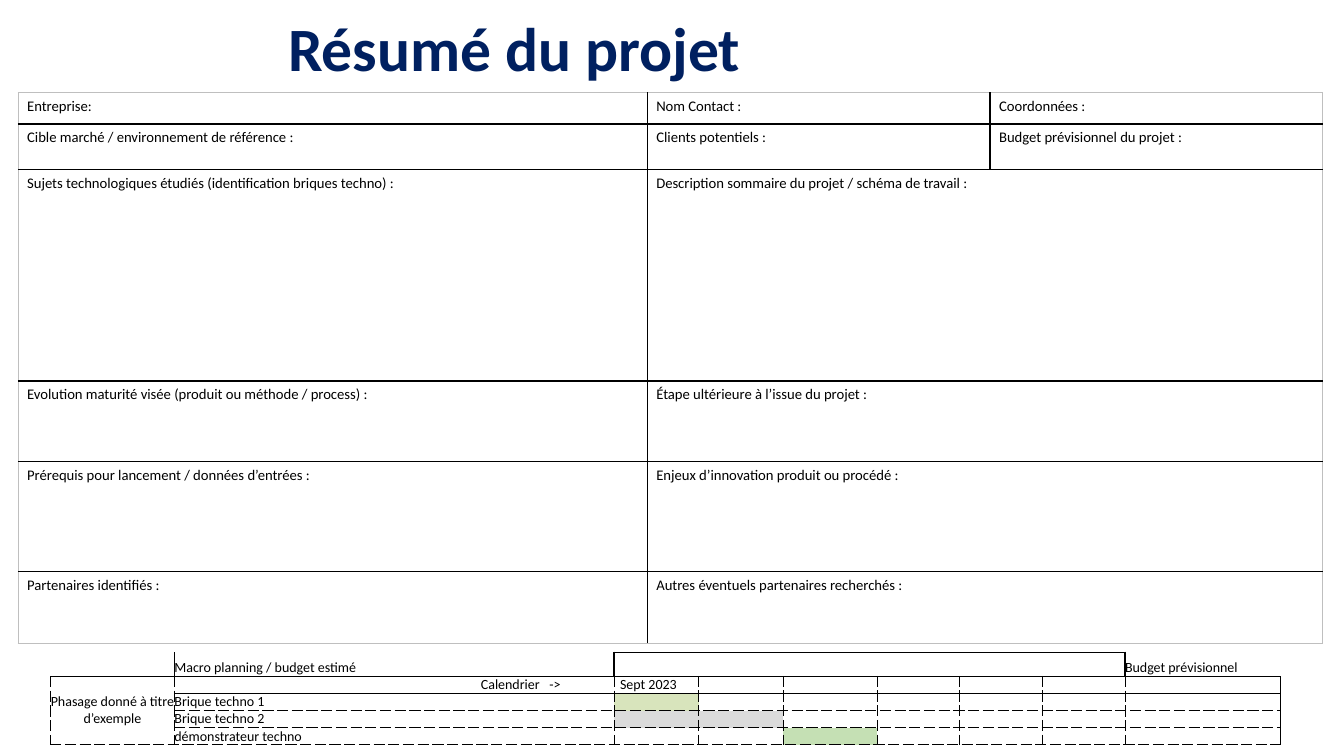
"""Build the project summary slide: title, description grid and macro planning."""
import lxml.etree
import pptx
import pptx.dml.color
import pptx.enum.text
import pptx.oxml.ns
import pptx.util

Inches = pptx.util.Inches
Pt = pptx.util.Pt
qn = pptx.oxml.ns.qn
MIDDLE = pptx.enum.text.MSO_ANCHOR.MIDDLE
BOTTOM = pptx.enum.text.MSO_ANCHOR.BOTTOM


def write(text_frame, text, size, colour="000000", bold=False):
    """Set the text of a frame, and keep the same size when it is empty."""
    text_frame.text = text
    paragraph = text_frame.paragraphs[0]
    for run in paragraph.runs:
        run.font.name = "Calibri"
        run.font.size = Pt(size)
        run.font.bold = bold
        run.font.color.rgb = pptx.dml.color.RGBColor.from_string(colour)
    if not text:
        lxml.etree.SubElement(paragraph._p, qn("a:endParaRPr"), sz=str(int(size * 100)))
    return paragraph


def dress(cell, edges, fill=None):
    """Draw the edges (width, dash, colour) of a cell by side, then its fill."""
    properties = cell._tc.get_or_add_tcPr()
    for side in "LRTB":
        width, dash, colour = edges.get(side, (0, "solid", None))
        line = lxml.etree.SubElement(properties, qn(f"a:ln{side}"), w=str(int(Pt(width))))
        if colour is None:
            lxml.etree.SubElement(line, qn("a:noFill"))
            continue
        paint = lxml.etree.SubElement(line, qn("a:solidFill"))
        lxml.etree.SubElement(paint, qn("a:srgbClr"), val=colour)
        lxml.etree.SubElement(line, qn("a:prstDash"), val=dash)
    if fill:
        cell.fill.solid()
        cell.fill.fore_color.rgb = pptx.dml.color.RGBColor.from_string(fill)
    else:
        cell.fill.background()


presentation = pptx.Presentation()
presentation.slide_width = Inches(13.33)
presentation.slide_height = Inches(7.5)
slide = presentation.slides.add_slide(presentation.slide_layouts[6])

title = slide.shapes.add_textbox(Inches(2.76), Inches(0.11), Inches(12.06 - 2), Inches(0.8))
title.text_frame.word_wrap = True
title.text_frame.vertical_anchor = MIDDLE
write(title.text_frame, "Résumé du projet", 44, "002060", True).line_spacing = 0.9

summary_rows = [
    (0.31, ["Entreprise:", "Nom Contact :", "Coordonnées :"]),
    (0.45, ["Cible marché / environnement de référence :", "Clients potentiels :",
            "Budget prévisionnel du projet :"]),
    (2.1, ["Sujets technologiques étudiés (identification briques techno) :",
           "Description sommaire du projet / schéma de travail :"]),
    (0.8, ["Evolution maturité visée (produit ou méthode / process) :",
           "Étape ultérieure à l’issue du projet :"]),
    (1.09, ["Prérequis pour lancement / données d’entrées :",
            "Enjeux d’innovation produit ou procédé :"]),
    (0.71, ["Partenaires identifiés :", "Autres éventuels partenaires recherchés :"]),
]
summary_widths = [6.24, 3.4, 3.3]
planning_widths = [1.23, 4.36, 0.84, 0.84, 0.93, 0.82, 0.82, 0.82, 1.54]
planning_heights = [0.24] + [0.17] * 4

tables = []
for left, top, widths, heights in [
    (0.18, 0.92, summary_widths, [height for height, texts in summary_rows]),
    (0.5, 6.47, planning_widths, planning_heights),
]:
    table = slide.shapes.add_table(
        len(heights), len(widths), Inches(left), Inches(top),
        Inches(sum(widths)), Inches(sum(heights))).table
    table.first_row = False
    table.horz_banding = False
    for column, width in zip(table.columns, widths):
        column.width = Inches(width)
    for row, height in zip(table.rows, heights):
        row.height = Inches(height)
    tables.append(table)
summary, planning = tables

inner = (1, "solid", "000000")
outer = (0.5, "solid", "BFBFBF")
last_row = len(summary_rows) - 1
for row, (height, texts) in enumerate(summary_rows):
    if len(texts) == 2:
        summary.cell(row, 1).merge(summary.cell(row, 2))
    for column in range(3):
        cell = summary.cell(row, column)
        cell.margin_left = cell.margin_right = Inches(0.09)
        write(cell.text_frame, texts[column] if column < len(texts) else "", 10.5)
        dress(cell, {
            "L": inner if column else outer,
            "R": outer if column == 2 or column == len(texts) - 1 else inner,
            "T": inner if row else outer,
            "B": inner if row < last_row else outer,
        })

planning_texts = {
    (0, 1): "Macro planning / budget estimé",
    (0, 8): "Budget prévisionnel",
    (1, 0): "Phasage donné à titre d’exemple",
    (1, 1): "Calendrier\t->",
    (1, 2): "Sept 2023",
    (2, 1): "Brique techno 1",
    (3, 1): "Brique techno 2",
    (4, 1): "démonstrateur techno",
}
planning_fills = {(2, 2): "D8E4BC", (3, 2): "DBDBDB", (3, 3): "DBDBDB", (4, 4): "C5E0B4"}
thin = (0.5, "solid", "000000")
dashed = (0.5, "dash", "000000")
header_edges = {0: {"R": inner, "B": thin}, 1: {"L": inner, "R": inner, "B": thin},
                8: {"L": inner, "B": thin}}
planning.cell(0, 2).merge(planning.cell(0, 7))
planning.cell(1, 0).merge(planning.cell(4, 0))
for row in range(len(planning_heights)):
    for column in range(len(planning_widths)):
        cell = planning.cell(row, column)
        cell.margin_left = cell.margin_right = cell.margin_top = cell.margin_bottom = 0
        cell.vertical_anchor = BOTTOM
        write(cell.text_frame, planning_texts.get((row, column), ""), 10)
        if row == 0:
            edges = header_edges.get(column, dict.fromkeys("LRTB", inner))
        else:
            edges = {
                "L": dashed,
                "R": thin if column == 8 else dashed,
                "T": inner if row == 1 and 2 <= column <= 7 else thin if row <= 2 else dashed,
                "B": thin if row == 1 and column else dashed,
            }
        dress(cell, edges, planning_fills.get((row, column)))

phasing = planning.cell(1, 0)
phasing.vertical_anchor = MIDDLE
phasing.text_frame.paragraphs[0].alignment = pptx.enum.text.PP_ALIGN.CENTER

calendar = planning.cell(1, 1)
calendar.margin_left = Inches(3.04)
calendar_properties = calendar.text_frame.paragraphs[0]._p.get_or_add_pPr()
tab_list = lxml.etree.SubElement(calendar_properties, qn("a:tabLst"))
lxml.etree.SubElement(tab_list, qn("a:tab"), pos=str(int(Inches(0.68))), algn="l")
planning.cell(1, 2).margin_left = Inches(0.06)

presentation.save("out.pptx")
